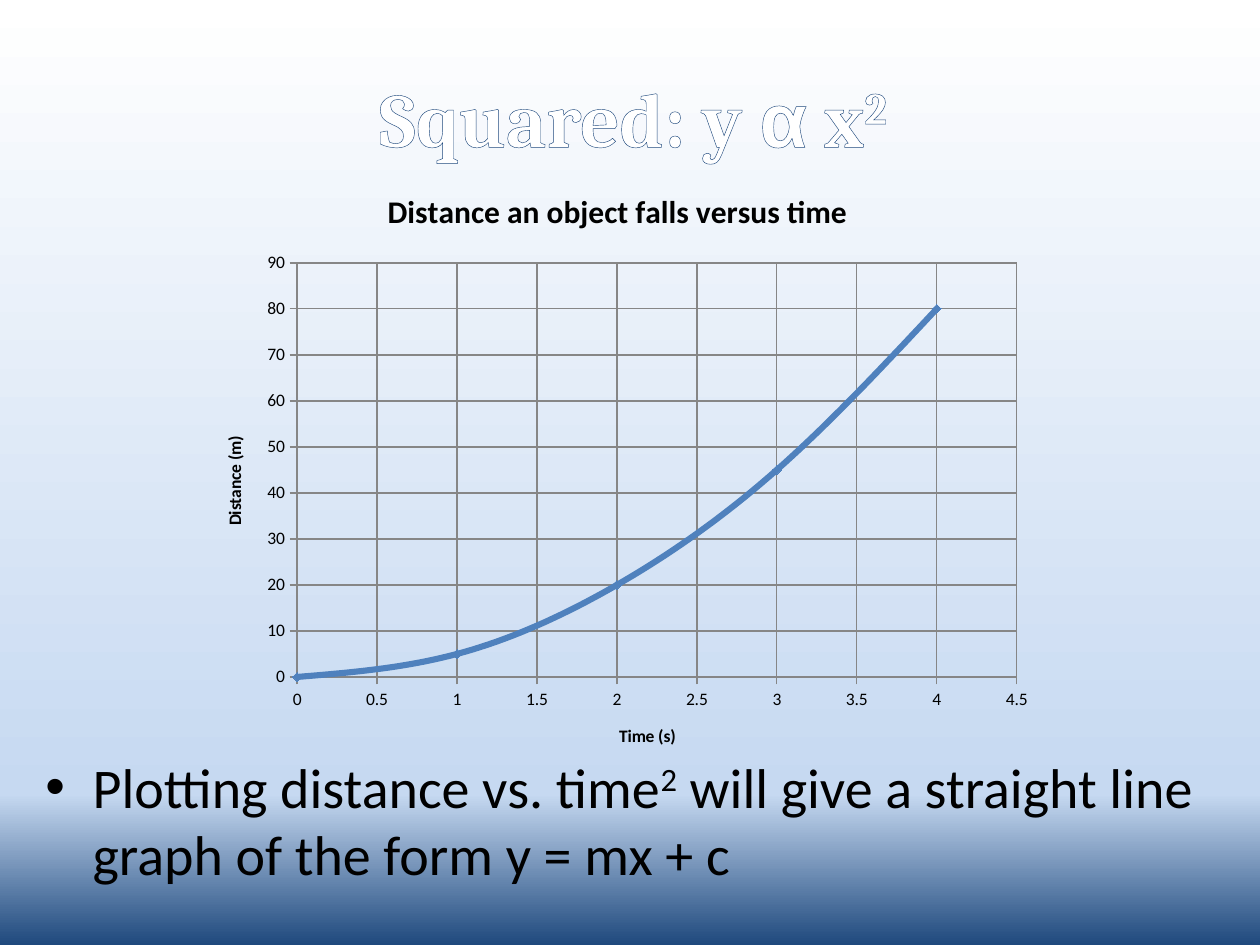
from copy import deepcopy

from lxml.etree import SubElement
from pptx import Presentation
from pptx.chart.data import XyChartData
from pptx.dml.color import RGBColor
from pptx.enum.chart import XL_CHART_TYPE, XL_MARKER_STYLE, XL_TICK_MARK
from pptx.enum.text import MSO_ANCHOR, MSO_AUTO_SIZE, PP_ALIGN
from pptx.oxml.ns import qn
from pptx.util import Inches, Pt

COLORS = {"navy": "1F497D", "sky": "C6D9F1", "white": "FFFFFF",
          "black": "000000", "curve": "4F81BD", "grid": "868686"}
BACKGROUND = [(0, "navy"), (0.16, "sky"), (1, "white")]

# (text, font, superscript)
TITLE = [("Squared: y ", "Cambria", False), ("α", "Arial", False),
         (" x", "Cambria", False), ("2", "Cambria", True)]
BODY = [("Plotting distance vs. time", "Calibri", False), ("2", "Calibri", True),
        (" will give a straight line graph of the form y = mx + c", "Calibri", False)]

CHART_TITLE = "Distance an object falls versus time "
TIME_TITLE, DISTANCE_TITLE = "Time (s)", "Distance (m)"
FALL = [(0, 0), (1, 5), (2, 20), (3, 45), (4, 80)]

MARGIN, TEXT_W = 0.26, 9.53
TITLE_BOX = (MARGIN, 0.3, TEXT_W, 1.25)
BODY_BOX = (MARGIN, 5.92, TEXT_W, 1.34)
CHART_BOX = (1.57, 1.31, 6.72, 4.82)


def rgb(name):
    return RGBColor.from_string(COLORS[name])


def place(shape, box):
    shape.left, shape.top, shape.width, shape.height = map(Inches, box)


def add_runs(p, runs, size, color, bold=False):
    for text, font, superscript in runs:
        r = p.add_run()
        r.text = text
        r.font.name, r.font.size, r.font.bold = font, Pt(size), bold
        r.font.color.rgb = rgb(color)
        if superscript:
            r.font._element.set("baseline", "30000")


def outline_text(r, color, width):
    rPr = r.font._element
    ln = SubElement(rPr, qn("a:ln"), w=str(Pt(width)))
    fill = SubElement(ln, qn("a:solidFill"))
    SubElement(fill, qn("a:srgbClr"), val=COLORS[color])
    rPr.insert(0, ln)


def paint_background(s):
    fill = s.background.fill
    fill.gradient()
    fill.gradient_angle = 90
    first = fill.gradient_stops[0]._gs
    first.addnext(deepcopy(first))
    for stop, (position, color) in zip(fill.gradient_stops, BACKGROUND):
        stop.position = position
        stop.color.rgb = rgb(color)


def set_title(owner, text, size):
    p = owner.text_frame.paragraphs[0]
    add_runs(p, [(text, "Calibri", False)], size, "black", bold=True)


def format_axis(axis, title, top, step):
    axis.minimum_scale, axis.maximum_scale, axis.major_unit = 0, top, step
    axis.has_major_gridlines = True
    axis.major_tick_mark = XL_TICK_MARK.OUTSIDE
    axis.minor_tick_mark = XL_TICK_MARK.NONE
    axis.tick_labels.number_format = "General"
    axis.tick_labels.number_format_is_linked = False
    for line in (axis.format.line, axis.major_gridlines.format.line):
        line.color.rgb = rgb("grid")
        line.width = Pt(0.75)
    set_title(axis.axis_title, title, 10)


def add_fall_chart(s):
    data = XyChartData()
    series = data.add_series("Series 1")
    for time, distance in FALL:
        series.add_data_point(time, distance)
    chart = s.shapes.add_chart(XL_CHART_TYPE.XY_SCATTER_SMOOTH,
                               *map(Inches, CHART_BOX), data).chart
    chart.font.name, chart.font.size = "Calibri", Pt(10)
    chart.font.color.rgb = rgb("black")
    chart.has_legend = False
    chart.has_title = True
    set_title(chart.chart_title, CHART_TITLE, 18)
    chart.chart_title.include_in_layout = False
    format_axis(chart.category_axis, TIME_TITLE, 4.5, 0.5)
    format_axis(chart.value_axis, DISTANCE_TITLE, 90, 10)

    plot = chart.plots[0]
    plot.vary_by_categories = False
    curve = plot.series[0]
    # XySeries has no smooth property
    curve._element.find(qn("c:smooth")).set("val", "1")
    curve.format.line.color.rgb = rgb("curve")
    curve.format.line.width = Pt(3.5)
    curve.marker.style, curve.marker.size = XL_MARKER_STYLE.DIAMOND, 5
    curve.marker.format.fill.solid()
    curve.marker.format.fill.fore_color.rgb = rgb("curve")
    curve.marker.format.line.color.rgb = rgb("curve")


def main():
    prs = Presentation()
    prs.slide_width, prs.slide_height = Inches(10), Inches(7.5)
    s = prs.slides.add_slide(prs.slide_layouts[1])
    paint_background(s)

    title, body = s.placeholders
    place(title, TITLE_BOX)
    title.text_frame.vertical_anchor = MSO_ANCHOR.MIDDLE
    p = title.text_frame.paragraphs[0]
    p.alignment = PP_ALIGN.CENTER
    add_runs(p, TITLE, 44, "white", bold=True)
    for r in p.runs:
        outline_text(r, "navy", 2.48)

    place(body, BODY_BOX)
    body.text_frame.auto_size = MSO_AUTO_SIZE.NONE
    p = body.text_frame.paragraphs[0]
    p.space_before = Pt(0)
    add_runs(p, BODY, 32, "black")

    add_fall_chart(s)
    prs.save("out.pptx")


if __name__ == "__main__":
    main()
